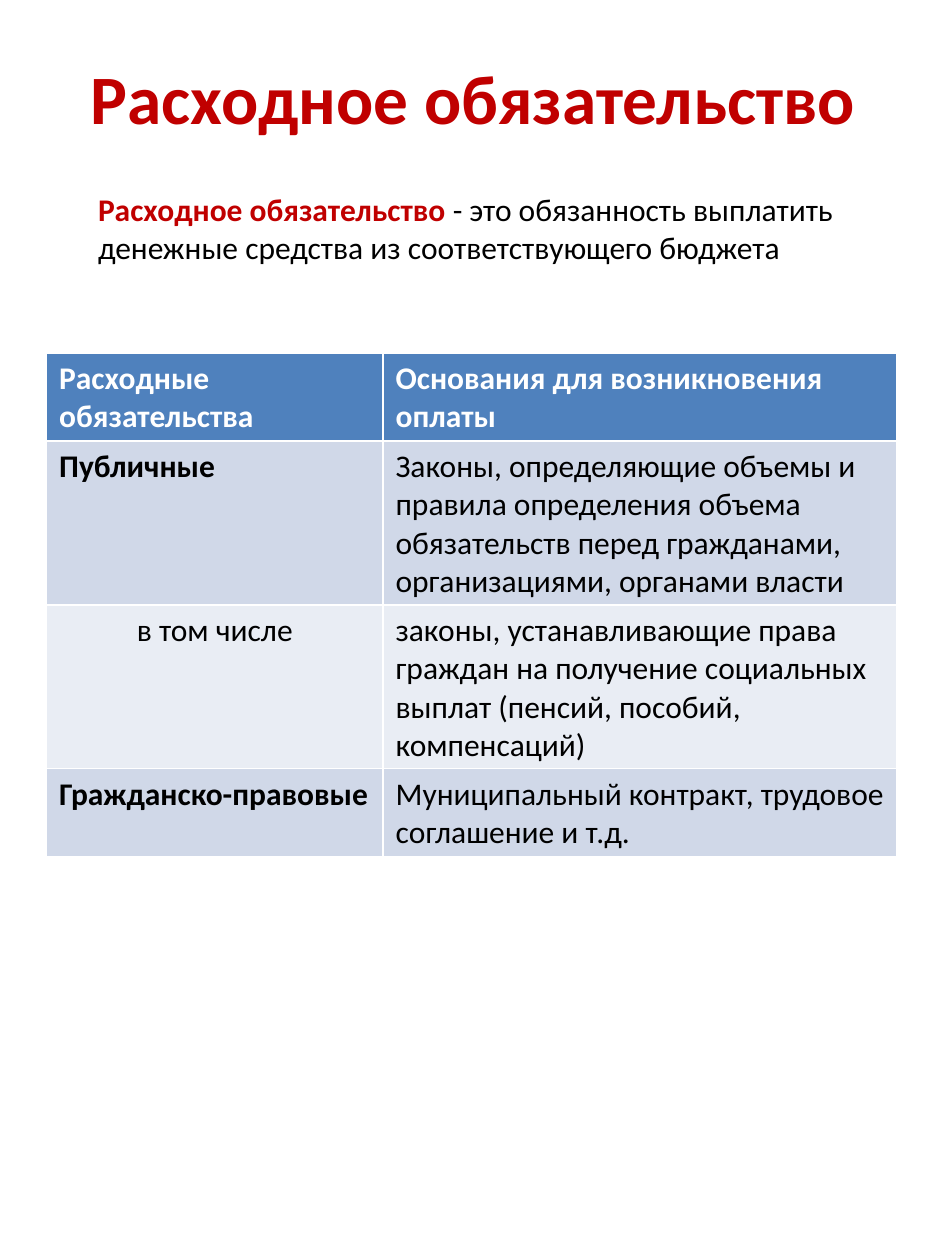
from dataclasses import dataclass

from pptx import Presentation
from pptx.dml.color import RGBColor as Color
from pptx.enum.text import MSO_ANCHOR as Anchor, MSO_AUTO_SIZE as AutoSize, PP_ALIGN as Align
from pptx.util import Inches, Pt

TITLE = "Расходное обязательство"
DEFINITION = "- это обязанность выплатить денежные средства из соответствующего бюджета"
OBLIGATIONS = [
    ("Расходные обязательства", "Основания для возникновения оплаты"),
    ("Публичные", "Законы, определяющие объемы и правила определения объема "
     "обязательств перед гражданами, организациями, органами власти"),
    ("в том числе", "законы, устанавливающие права граждан на получение "
     "социальных выплат (пенсий, пособий, компенсаций)"),
    ("Гражданско-правовые", "Муниципальный контракт, трудовое соглашение и т.д."),
]
SUBITEM_ROW = 2


@dataclass(frozen=True)
class Theme:
    font: str = "Calibri"
    title_size: float = 39.6
    body_size: float = 18
    accent: str = "C00000"
    text: str = "000000"
    header_text: str = "FFFFFF"
    header_fill: str = "4F81BD"
    bands: tuple = ("E9EDF4", "D0D8E8")


class SlideBuilder:
    """Adds styled elements to one slide."""

    def __init__(self, slide, theme):
        self.slide = slide
        self.theme = theme

    def style(self, font, size, color, bold=False):
        font.name = self.theme.font
        font.size = Pt(size)
        font.bold = bold
        font.color.rgb = Color.from_string(color)

    def title(self, text, left, top, width, height):
        shape = self.slide.shapes.title
        shape.left, shape.top = Inches(left), Inches(top)
        shape.width, shape.height = Inches(width), Inches(height)
        frame = shape.text_frame
        frame.text = text
        frame.auto_size = AutoSize.NONE
        frame.vertical_anchor = Anchor.MIDDLE
        paragraph = frame.paragraphs[0]
        paragraph.alignment = Align.CENTER
        self.style(paragraph.font, self.theme.title_size, self.theme.accent, True)

    def definition(self, term, meaning, left, top, width, height):
        shape = self.slide.shapes.add_textbox(
            Inches(left), Inches(top), Inches(width), Inches(height))
        frame = shape.text_frame
        frame.word_wrap = True
        frame.auto_size = AutoSize.SHAPE_TO_FIT_TEXT
        paragraph = frame.paragraphs[0]
        for text, color, bold in ((term + " ", self.theme.accent, True),
                                  (meaning, self.theme.text, False)):
            run = paragraph.add_run()
            run.text = text
            self.style(run.font, self.theme.body_size, color, bold)

    def table(self, rows, left, top, widths, heights):
        table = self.slide.shapes.add_table(
            len(rows), len(widths), Inches(left), Inches(top),
            Inches(sum(widths)), Inches(sum(heights))).table
        for column, width in zip(table.columns, widths):
            column.width = Inches(width)
        for row, height in zip(table.rows, heights):
            row.height = Inches(height)
        for row_index, texts in enumerate(rows):
            for column_index, text in enumerate(texts):
                self.cell(table.cell(row_index, column_index), text, row_index, column_index)

    def cell(self, cell, text, row_index, column_index):
        theme = self.theme
        header = row_index == 0
        label = column_index == 0
        subitem = label and row_index == SUBITEM_ROW
        cell.fill.solid()
        cell.fill.fore_color.rgb = Color.from_string(
            theme.header_fill if header else theme.bands[row_index % 2])
        cell.text = text
        paragraph = cell.text_frame.paragraphs[0]
        if subitem:
            paragraph.alignment = Align.CENTER
        self.style(paragraph.font, theme.body_size,
                   theme.header_text if header else theme.text,
                   header or (label and not subitem))


def main():
    presentation = Presentation()
    presentation.slide_width, presentation.slide_height = Inches(7.5), Inches(10)
    slide = presentation.slides.add_slide(presentation.slide_layouts[5])
    builder = SlideBuilder(slide, Theme())
    builder.title(TITLE, 0.38, 0.4, 6.75, 0.74)
    builder.definition(TITLE, DEFINITION, 0.68, 1.46, 6.14, 0.71)
    builder.table(OBLIGATIONS, 0.37, 2.8, (2.67, 4.08), (0.7, 1.3, 1.3, 0.7))
    presentation.save("out.pptx")


if __name__ == "__main__":
    main()
